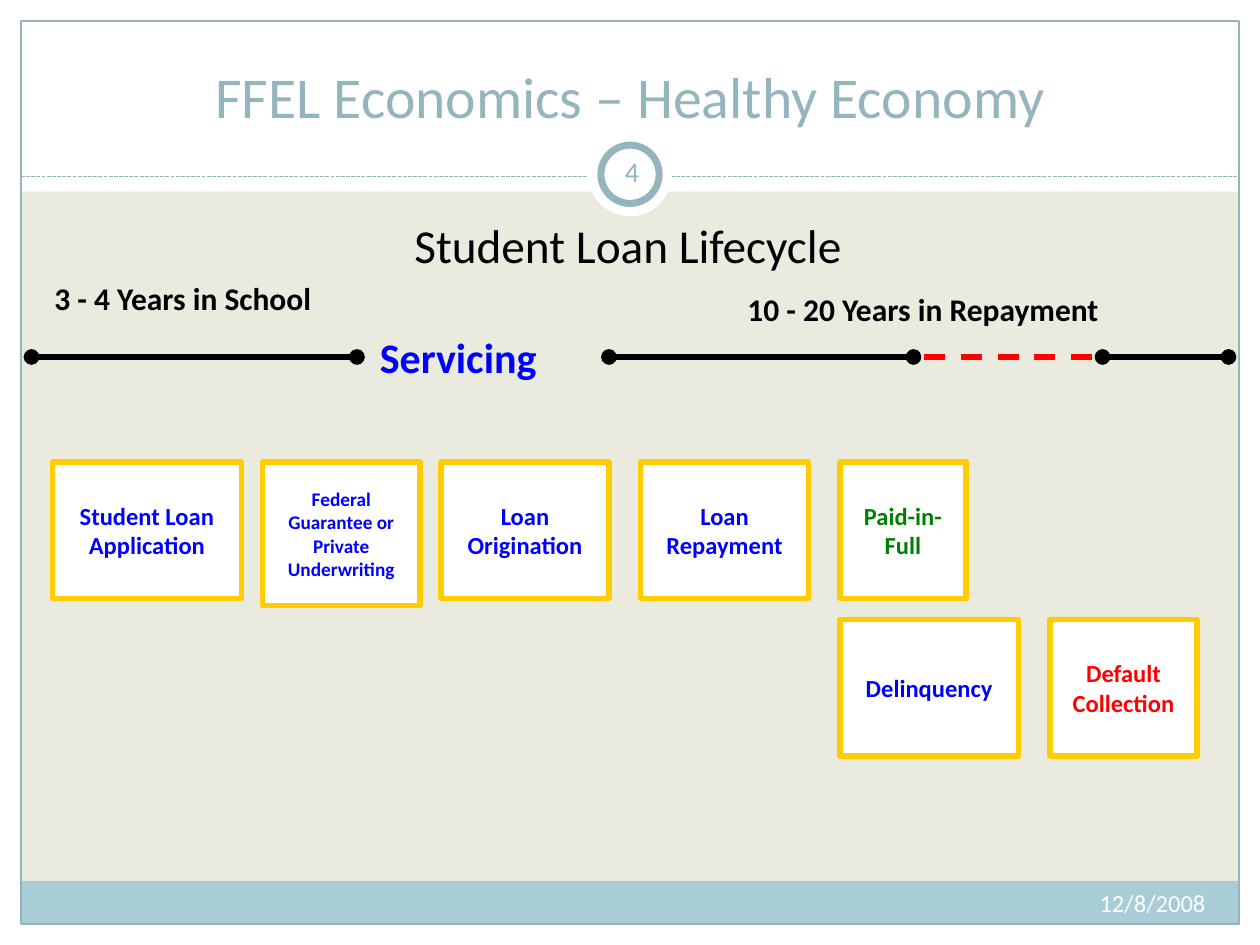
from lxml.etree import SubElement
from pptx import Presentation
from pptx.dml.color import RGBColor
from pptx.enum.dml import MSO_LINE
from pptx.enum.shapes import MSO_CONNECTOR, MSO_SHAPE
from pptx.enum.text import MSO_ANCHOR, PP_ALIGN
from pptx.oxml.ns import qn
from pptx.util import Inches, Pt

WHITE = RGBColor(0xFF, 0xFF, 0xFF)
BLACK = RGBColor(0, 0, 0)
BLUE = RGBColor(0, 0, 0xFF)
GREEN = RGBColor(0, 0x80, 0)
RED = RGBColor(0xFF, 0, 0)
GOLD = RGBColor(0xFF, 0xCC, 0)
TEAL = RGBColor(0x94, 0xB5, 0xBE)
PALE_TEAL = RGBColor(0xA8, 0xCD, 0xD7)
CREAM = RGBColor(0xEA, 0xEB, 0xDE)

FONT = "Calibri"
COLUMNS, ROWS = 120, 90
MARGIN = 2
TIMELINE_ROW = 34
STAGE_ROW, STAGE_HEIGHT = 44, 13
LATE_STAGE_ROW = 59

STAGES = [  # column, row, width, height, lines, size, colour
    (5, STAGE_ROW, 18, STAGE_HEIGHT, ["Student Loan", "Application"], 14, BLUE),
    (25, STAGE_ROW, 15, 13.7,
     ["Federal", "Guarantee or Private Underwriting"], 11, BLUE),
    (42, STAGE_ROW, 16, STAGE_HEIGHT, ["Loan", "Origination"], 14, BLUE),
    (61, STAGE_ROW, 16, STAGE_HEIGHT, ["Loan", "Repayment"], 14, BLUE),
    (80, STAGE_ROW, 12, STAGE_HEIGHT, ["Paid-in-", "Full"], 14, GREEN),
    (80, LATE_STAGE_ROW, 17, STAGE_HEIGHT, ["Delinquency"], 14, BLUE),
    (100, LATE_STAGE_ROW, 14, STAGE_HEIGHT, ["Default", "Collection"], 14, RED),
]


def grid(*cells):
    """Turn grid units, a twelfth of an inch each, into lengths."""
    return [Inches(cell / 12) for cell in cells]


def write_lines(text_frame, lines, size, color, bold=False, align=PP_ALIGN.LEFT):
    for index, line in enumerate(lines):
        paragraph = text_frame.paragraphs[0] if index == 0 else text_frame.add_paragraph()
        paragraph.alignment = align
        run = paragraph.add_run()
        run.text = line
        run.font.name = FONT
        run.font.size = Pt(size)
        run.font.bold = bold
        run.font.color.rgb = color


def add_block(slide, cells, fill=None, line=None, width=0.75, kind=MSO_SHAPE.RECTANGLE):
    shape = slide.shapes.add_shape(kind, *grid(*cells))
    shape.shadow.inherit = False
    if fill is None:
        shape.fill.background()
    else:
        shape.fill.solid()
        shape.fill.fore_color.rgb = fill
    if line is None:
        shape.line.fill.background()
    else:
        shape.line.color.rgb = line
        shape.line.width = Pt(width)
    return shape


def add_disc(slide, center, diameter, **style):
    column, row = center
    cells = (column - diameter / 2, row - diameter / 2, diameter, diameter)
    add_block(slide, cells, WHITE, kind=MSO_SHAPE.OVAL, **style)


def add_label(slide, cells, text, size, color, anchor=MSO_ANCHOR.TOP, **style):
    text_frame = slide.shapes.add_textbox(*grid(*cells)).text_frame
    text_frame.word_wrap = True
    text_frame.vertical_anchor = anchor
    write_lines(text_frame, [text], size, color, **style)
    return text_frame


def add_rule(slide, start, end, row, color, width, dash=None, dots=False):
    """Draw a horizontal line, with round ends if dots is set."""
    connector = slide.shapes.add_connector(
        MSO_CONNECTOR.STRAIGHT, *grid(start, row, end, row))
    connector.line.color.rgb = color
    connector.line.width = Pt(width)
    if dash is not None:
        connector.line.dash_style = dash
    properties = connector._element.spPr
    if dots:
        outline = properties.find(qn("a:ln"))
        for tag in ("a:headEnd", "a:tailEnd"):
            SubElement(outline, qn(tag), type="oval")
    SubElement(properties, qn("a:effectLst"))


def add_stage(slide, column, row, width, height, lines, size, color):
    shape = add_block(slide, (column, row, width, height), WHITE, GOLD, 3)
    text_frame = shape.text_frame
    text_frame.word_wrap = any(len(line) > width for line in lines)
    text_frame.vertical_anchor = MSO_ANCHOR.MIDDLE
    write_lines(text_frame, lines, size, color, bold=True, align=PP_ALIGN.CENTER)


def add_frame(slide):
    slide.background.fill.solid()
    slide.background.fill.fore_color.rgb = CREAM
    inner_width, inner_height = COLUMNS - 2 * MARGIN, ROWS - 2 * MARGIN
    for cells in (
        (0, ROWS - MARGIN, COLUMNS, MARGIN),
        (0, 0, COLUMNS, 18.25),
        (0, 0, MARGIN, ROWS),
        (COLUMNS - MARGIN, 0, MARGIN, ROWS),
    ):
        add_block(slide, cells, WHITE)
    add_block(slide, (MARGIN, 83.9, inner_width, 4.1), PALE_TEAL)
    add_block(slide, (MARGIN, MARGIN, inner_width, inner_height), line=TEAL)
    add_rule(slide, MARGIN, COLUMNS - MARGIN, 16.8, TEAL, 0.75, MSO_LINE.SQUARE_DOT)
    badge_center = (COLUMNS / 2, 16.6)
    add_disc(slide, badge_center, 8)
    add_disc(slide, badge_center, 5.55, line=TEAL, width=4)


def add_headings(slide):
    add_label(slide, (4, 3, 112, 10), "FFEL Economics – Healthy Economy", 33, TEAL,
              MSO_ANCHOR.BOTTOM, align=PP_ALIGN.CENTER)
    add_label(slide, (76, 84, 40, 4.8), "12/8/2008", 14, WHITE, align=PP_ALIGN.RIGHT)
    number = add_label(slide, (57.2, 13.4, 6, 5.8), "4", 16, TEAL,
                       MSO_ANCHOR.MIDDLE, align=PP_ALIGN.CENTER)
    number.margin_left = number.margin_right = Inches(0.05)
    add_label(slide, (4, 20, 111.6, 60), "Student Loan Lifecycle", 27, BLACK,
              align=PP_ALIGN.CENTER)


def add_timeline(slide):
    add_label(slide, (4, 26, 35, 4.8), "3 - 4 Years in School", 18, BLACK, bold=True)
    add_label(slide, (70, 27, 46.4, 4.8), "10 - 20 Years in Repayment", 18, BLACK, bold=True)
    add_label(slide, (35, 31, 23, 6), "Servicing", 24, BLUE, bold=True)
    for start, end in ((3, 34), (58, 87), (105, 117)):
        add_rule(slide, start, end, TIMELINE_ROW, BLACK, 3, dots=True)
    add_rule(slide, 88, 104, TIMELINE_ROW, RED, 3, MSO_LINE.DASH)


def main():
    presentation = Presentation()
    presentation.slide_width, presentation.slide_height = grid(COLUMNS, ROWS)
    slide = presentation.slides.add_slide(presentation.slide_layouts[6])
    add_frame(slide)
    add_headings(slide)
    for stage in STAGES:
        add_stage(slide, *stage)
    add_timeline(slide)
    presentation.save("out.pptx")


if __name__ == "__main__":
    main()
